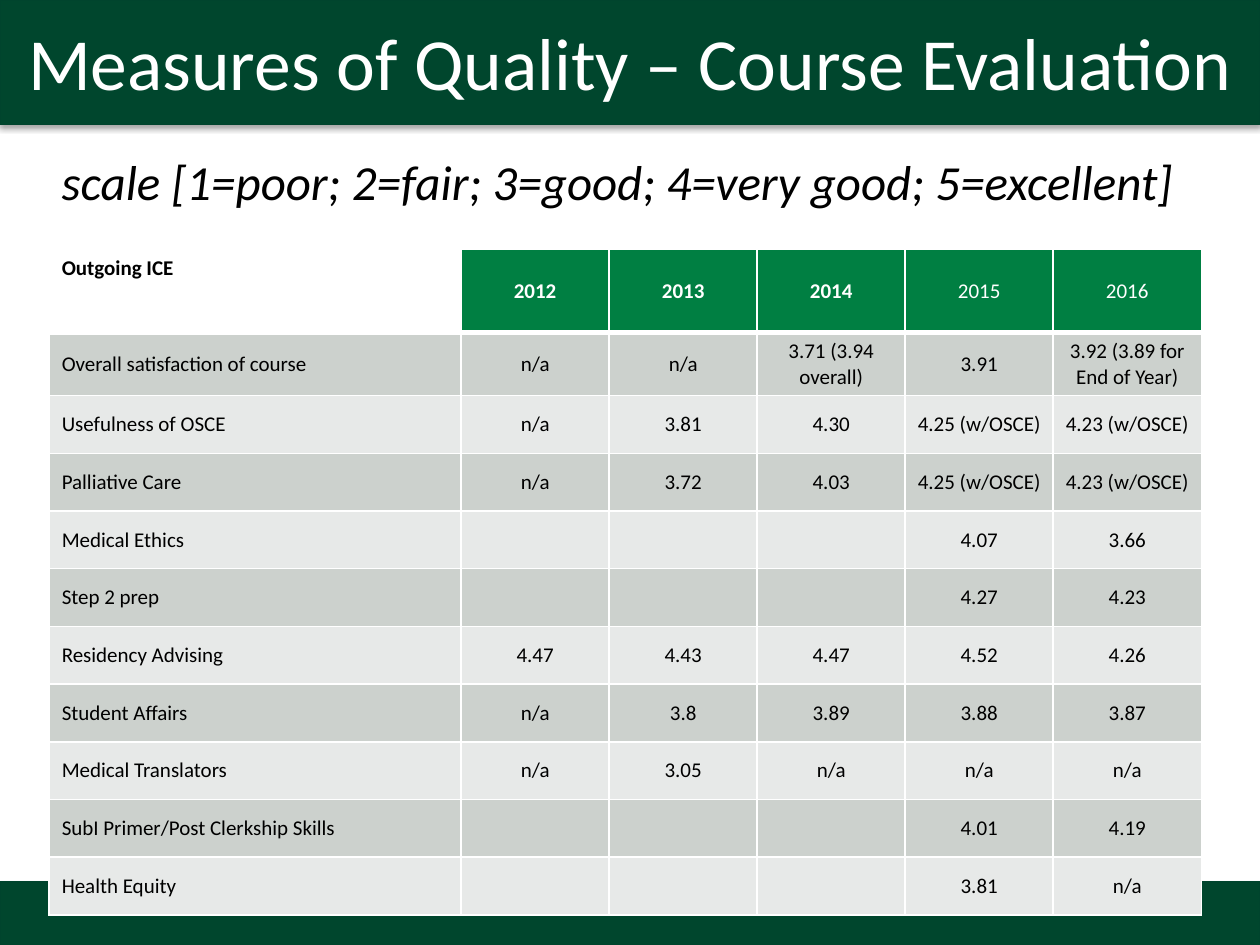
from lxml import etree
from pptx import Presentation
from pptx import util as u
from pptx.dml.color import RGBColor
from pptx.enum import shapes, text
from pptx.oxml.ns import qn

TITLE = "Measures of Quality – Course Evaluation"
SCALE = "scale [1=poor; 2=fair; 3=good; 4=very good; 5=excellent]"
HEADER = ("Outgoing ICE", "2012", "2013", "2014", "2015", "2016")
RATINGS = [
    ("Overall satisfaction of course", "n/a", "n/a", "3.71 (3.94 overall)",
     "3.91", "3.92 (3.89 for End of Year)"),
    ("Usefulness of OSCE", "n/a", "3.81", "4.30", "4.25 (w/OSCE)", "4.23 (w/OSCE)"),
    ("Palliative Care", "n/a", "3.72", "4.03", "4.25 (w/OSCE)", "4.23 (w/OSCE)"),
    ("Medical Ethics", "", "", "", "4.07", "3.66"),
    ("Step 2 prep", "", "", "", "4.27", "4.23"),
    ("Residency Advising", "4.47", "4.43", "4.47", "4.52", "4.26"),
    ("Student Affairs", "n/a", "3.8", "3.89", "3.88", "3.87"),
    ("Medical Translators", "n/a", "3.05", "n/a", "n/a", "n/a"),
    ("SubI Primer/Post Clerkship Skills", "", "", "", "4.01", "4.19"),
    ("Health Equity", "", "", "", "3.81", "n/a"),
]
REGULAR_WEIGHT_YEARS = ("2015", "2016")

WIDTH, HEIGHT = 10, 7.5
LEFT = 0.39
LABEL_WIDTH, YEAR_WIDTH = 3.27, 1.175
HEADER_HEIGHT, ROW_HEIGHT = 0.66, 0.458
FONT = "Calibri"
WHITE = RGBColor(0xFF, 0xFF, 0xFF)
BLACK = RGBColor(0, 0, 0)
DARK_GREEN = RGBColor(0x00, 0x46, 0x2D)
EDGE_GREEN = RGBColor(0x00, 0x44, 0x2D)
GREEN = RGBColor(0x00, 0x7F, 0x42)
BANDS = (RGBColor(0xCC, 0xD1, 0xCD), RGBColor(0xE7, 0xE9, 0xE8))


def add_span(para, words, size, color, bold=False, italic=False):
    span = para.add_run()
    span.text = words
    font = span.font
    font.name, font.size, font.color.rgb = FONT, u.Pt(size), color
    font.bold, font.italic = bold, italic


def add_band(page, top, height):
    band = page.shapes.add_shape(shapes.MSO_SHAPE.RECTANGLE, 0, u.Inches(top),
                                 u.Inches(WIDTH), u.Inches(height))
    band.fill.solid()
    band.fill.fore_color.rgb = DARK_GREEN
    band.line.color.rgb = EDGE_GREEN
    band.line.width = u.Pt(0.75)
    band.shadow.inherit = False
    effects = band._element.spPr.find(qn("a:effectLst"))
    shadow = etree.SubElement(effects, qn("a:outerShdw"), blurRad=str(u.Pt(3.1)),
                              dist=str(u.Pt(1.8)), dir="5400000", rotWithShape="0")
    color = etree.SubElement(shadow, qn("a:srgbClr"), val="000000")
    etree.SubElement(color, qn("a:alpha"), val="35000")


def add_words(page, area, words, size, color, align, anchor, italic=False):
    box = page.shapes.add_textbox(*(u.Inches(part) for part in area))
    frame = box.text_frame
    frame.word_wrap = True
    frame.vertical_anchor = anchor
    para = frame.paragraphs[0]
    para.alignment = align
    add_span(para, words, size, color, italic=italic)


def set_borders(cell, row):
    widths = {"L": 1, "R": 1, "T": 3 if row == 1 else 1, "B": 3 if row == 0 else 1}
    for side, width in widths.items():
        line = etree.SubElement(cell._tc.get_or_add_tcPr(), qn("a:ln" + side),
                                w=str(u.Pt(width)))
        fill = etree.SubElement(line, qn("a:solidFill"))
        etree.SubElement(fill, qn("a:srgbClr"), val=str(WHITE))


def fill_cell(cell, row, column, words):
    heading, label = row == 0, column == 0
    corner = heading and label
    set_borders(cell, row)
    if corner:
        cell.fill.background()
    else:
        cell.fill.solid()
        cell.fill.fore_color.rgb = GREEN if heading else BANDS[(row - 1) % 2]
    cell.vertical_anchor = text.MSO_ANCHOR.TOP if corner else text.MSO_ANCHOR.MIDDLE
    para = cell.text_frame.paragraphs[0]
    para.alignment = text.PP_ALIGN.LEFT if label else text.PP_ALIGN.CENTER
    if words:
        add_span(para, words, 12, WHITE if heading and not label else BLACK,
                 bold=heading and words not in REGULAR_WEIGHT_YEARS)


def add_ratings(page):
    rows = [HEADER] + RATINGS
    years = len(HEADER) - 1
    table = page.shapes.add_table(
        len(rows), len(HEADER), u.Inches(LEFT), u.Inches(1.98),
        u.Inches(LABEL_WIDTH + years * YEAR_WIDTH),
        u.Inches(HEADER_HEIGHT + len(RATINGS) * ROW_HEIGHT)).table
    table.first_row = table.horz_banding = False
    for index, column in enumerate(table.columns):
        column.width = u.Inches(YEAR_WIDTH if index else LABEL_WIDTH)
    for index, row in enumerate(table.rows):
        row.height = u.Inches(ROW_HEIGHT if index else HEADER_HEIGHT)
        for place, words in enumerate(rows[index]):
            fill_cell(table.cell(index, place), index, place, words)


def main():
    deck = Presentation()
    deck.slide_width, deck.slide_height = u.Inches(WIDTH), u.Inches(HEIGHT)
    page = deck.slides.add_slide(deck.slide_layouts[6])
    add_band(page, 0, 0.99)
    add_band(page, 7, 0.5)
    add_words(page, (LEFT, 1.15, 9.5, 0.8), SCALE, 28, BLACK,
              text.PP_ALIGN.LEFT, text.MSO_ANCHOR.TOP, italic=True)
    add_words(page, (0, 0, WIDTH, 0.97), TITLE, 42, WHITE,
              text.PP_ALIGN.CENTER, text.MSO_ANCHOR.MIDDLE)
    add_ratings(page)
    deck.save("out.pptx")


if __name__ == "__main__":
    main()
